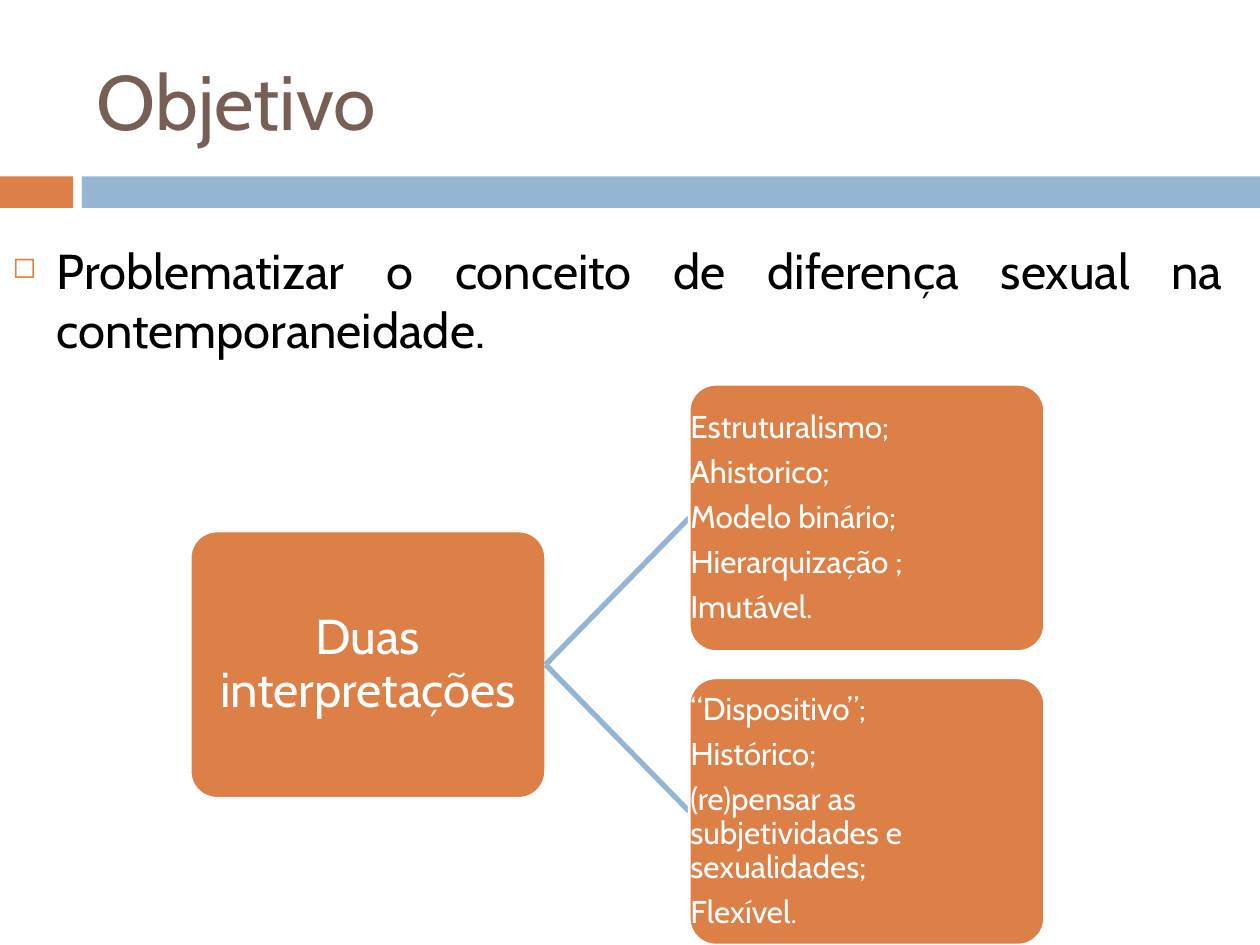
from lxml import etree
from pptx import Presentation
from pptx import util as u
from pptx.dml.color import RGBColor
from pptx.enum import shapes, text
from pptx.oxml import ns

ORANGE, BLUE, BROWN, WHITE, BLACK = "DD8047", "94B6D2", "775F55", "FFFFFF", "000000"
NODE_WIDTH, NODE_HEIGHT = 2.82, 2.12


def colour(value):
    return RGBColor.from_string(value)


def add_element(parent, name, **attributes):
    return etree.SubElement(parent, ns.qn(name), attributes)


def add_bullet(para, symbol, value, percent, indent):
    properties = para._p.get_or_add_pPr()
    properties.set("marL", str(u.Inches(indent)))
    properties.set("indent", str(-u.Inches(indent)))
    add_element(add_element(properties, "a:buClr"), "a:srgbClr", val=value)
    add_element(properties, "a:buSzPct", val=str(percent * 1000))
    add_element(properties, "a:buChar", char=symbol)


def add_text(page, box, lines, size, value, align=text.PP_ALIGN.LEFT,
             anchor=text.MSO_ANCHOR.TOP, insets=(0.1, 0.05),
             spacing=None, before=0, after=0):
    frame = page.shapes.add_textbox(*map(u.Inches, box)).text_frame
    frame.word_wrap = True
    frame.vertical_anchor = anchor
    frame.margin_left = frame.margin_right = u.Inches(insets[0])
    frame.margin_top = frame.margin_bottom = u.Inches(insets[1])
    for index, line in enumerate(lines):
        para = frame.add_paragraph() if index else frame.paragraphs[0]
        para.alignment = align
        para.line_spacing = spacing
        para.space_before, para.space_after = u.Pt(before), u.Pt(after)
        span = para.add_run()
        span.text = line
        span.font.name = "Cabin"
        span.font.size = u.Pt(size)
        span.font.color.rgb = colour(value)
    return frame


def add_block(page, box, fill, kind=shapes.MSO_SHAPE.RECTANGLE, line=None):
    block = page.shapes.add_shape(kind, *map(u.Inches, box))
    block.shadow.inherit = False
    block.fill.solid()
    block.fill.fore_color.rgb = colour(fill)
    if line:
        block.line.color.rgb = colour(line)
        block.line.width = u.Pt(1.5)
    else:
        block.line.fill.background()
    return block


def add_header(page, box, title):
    left, top, width, height = box
    bar_top, bar_height, accent, gap = top + 1.4, 0.25, 0.58, 0.07
    add_block(page, (left, bar_top, accent, bar_height), ORANGE)
    add_block(page, (left + accent + gap, bar_top, width - accent - gap, bar_height), BLUE)
    add_text(page, (left + 0.67, top + 0.25, 8.92, 1.08), [title], 44, BROWN,
             anchor=text.MSO_ANCHOR.MIDDLE)


def add_goal(page, box, goal):
    frame = add_text(page, box, [goal], 28, BLACK,
                     align=text.PP_ALIGN.JUSTIFY, before=7)
    add_bullet(frame.paragraphs[0], "◻", ORANGE, 60, 0.35)


def add_node(page, box, lines, size, align, inset):
    node = add_block(page, box, ORANGE, shapes.MSO_SHAPE.ROUNDED_RECTANGLE, WHITE)
    node.adjustments[0] = 0.1
    add_text(page, box, lines, size, WHITE, align=align,
             anchor=text.MSO_ANCHOR.MIDDLE, insets=(inset, inset),
             spacing=0.9, after=size * 0.35)


def add_link(page, start, end):
    link = page.shapes.add_connector(
        shapes.MSO_CONNECTOR.STRAIGHT, *map(u.Inches, (*start, *end)))
    link.line.color.rgb = colour(BLUE)
    link.line.width = u.Pt(3)
    add_element(link._element.spPr, "a:effectLst")


def add_tree(page, box, root, branches):
    left, top, width, height = box
    middle = top + height / 2
    branch_left = left + width - NODE_WIDTH
    step = (height - NODE_HEIGHT) / (len(branches) - 1)
    add_node(page, (left, middle - NODE_HEIGHT / 2, NODE_WIDTH, NODE_HEIGHT),
             [root], 28, text.PP_ALIGN.CENTER, 0.02)
    for index, lines in enumerate(branches):
        branch_top = top + index * step
        add_link(page, (left + NODE_WIDTH, middle),
                 (branch_left, branch_top + NODE_HEIGHT / 2))
        add_node(page, (branch_left, branch_top, NODE_WIDTH, NODE_HEIGHT),
                 lines, 18, text.PP_ALIGN.LEFT, 0.01)


def main():
    deck = Presentation()
    deck.slide_width, deck.slide_height = u.Inches(10), u.Inches(7.5)
    page = deck.slides.add_slide(deck.slide_layouts[6])
    add_header(page, (0, 0, 10, 1.65), "Objetivo")
    add_goal(page, (0, 1.86, 9.8, 1.26),
             "Problematizar o conceito de diferença sexual na contemporaneidade.")
    add_tree(page, (1.51, 3.05, 6.78, 4.45), "Duas interpretações", [
        ["Estruturalismo;", "Ahistorico;", "Modelo binário;",
         "Hierarquização ;", "Imutável."],
        ["“Dispositivo”;", "Histórico;",
         "(re)pensar as subjetividades e sexualidades;", "Flexível."],
    ])
    deck.save("out.pptx")


if __name__ == "__main__":
    main()
